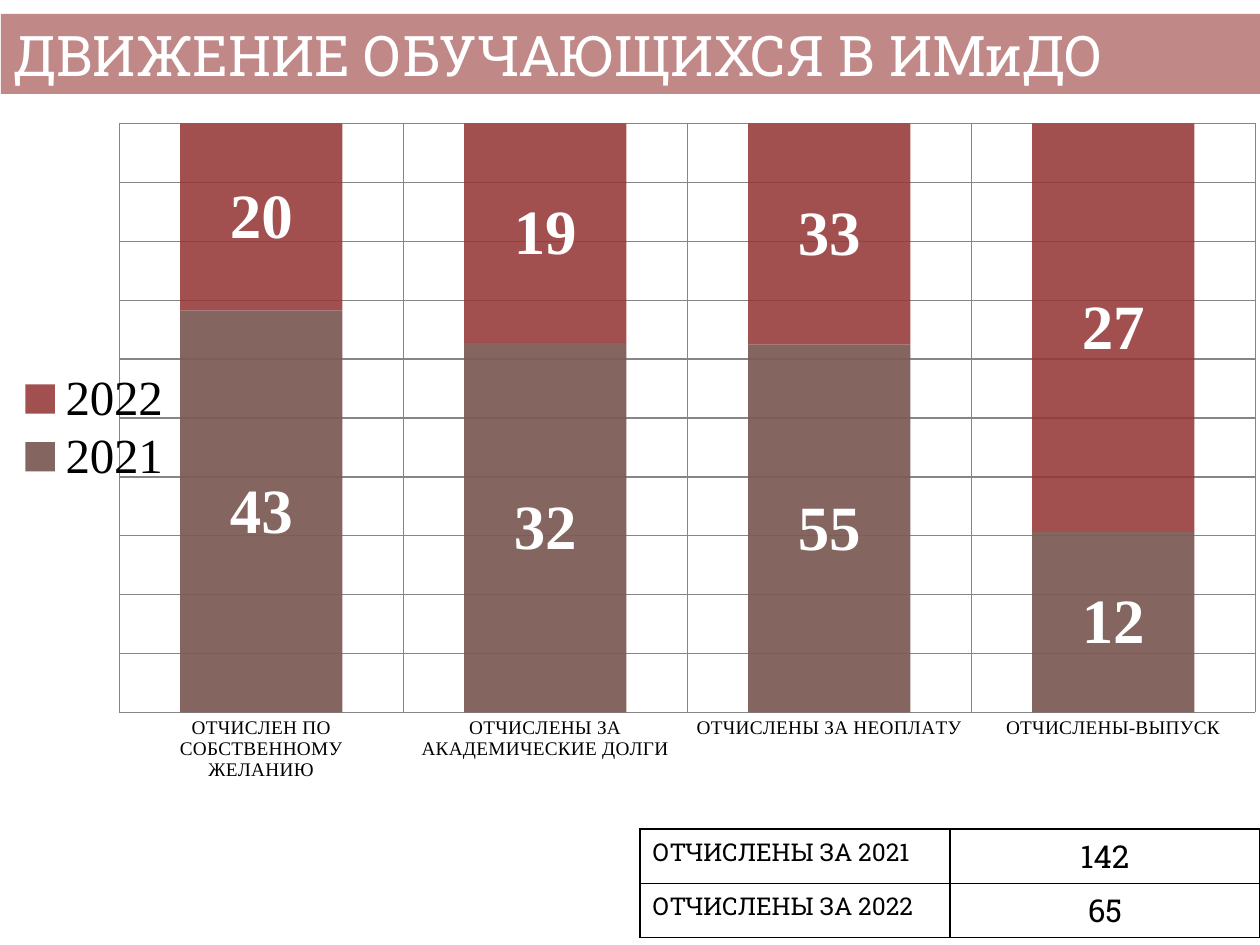
"""Build the slide on student movement: title band, stacked chart and totals table."""
from lxml import etree
from pptx import Presentation
from pptx.chart.data import CategoryChartData
from pptx.dml.color import RGBColor
from pptx.enum.chart import (XL_CHART_TYPE, XL_LABEL_POSITION, XL_LEGEND_POSITION,
                             XL_TICK_MARK)
from pptx.enum.shapes import MSO_SHAPE
from pptx.enum.text import MSO_ANCHOR, PP_ALIGN
from pptx.oxml.ns import qn
from pptx.util import Pt

STACKED = XL_CHART_TYPE.COLUMN_STACKED_100
MIDDLE = XL_LABEL_POSITION.CENTER
AT_LEFT = XL_LEGEND_POSITION.LEFT
NO_TICK = XL_TICK_MARK.NONE
RECT = MSO_SHAPE.RECTANGLE
ANCHOR = MSO_ANCHOR.MIDDLE
LEFT, CENTER = PP_ALIGN.LEFT, PP_ALIGN.CENTER

WHITE = RGBColor(0xFF, 0xFF, 0xFF)
BLACK = RGBColor(0, 0, 0)
RED = RGBColor(0x95, 0x37, 0x35)
BROWN = RGBColor(0x7C, 0x5A, 0x54)
GREY = RGBColor(0x86, 0x86, 0x86)
SLAB, SERIF = "Roboto Slab", "Times New Roman"

CATS = ["ОТЧИСЛЕН ПО СОБСТВЕННОМУ ЖЕЛАНИЮ", "ОТЧИСЛЕНЫ ЗА АКАДЕМИЧЕСКИЕ ДОЛГИ",
        "ОТЧИСЛЕНЫ ЗА НЕОПЛАТУ", "ОТЧИСЛЕНЫ-ВЫПУСК"]
YEARS = [("2021", (43, 32, 55, 12), BROWN, 93), ("2022", (20, 19, 33, 27), RED, 87)]
TOTALS = [("ОТЧИСЛЕНЫ ЗА 2021", "142"), ("ОТЧИСЛЕНЫ ЗА 2022", "65")]


def px(*sizes):
    """Turn pixels into EMU."""
    return [round(size * 914400 / 126) for size in sizes]


def fade(colors, alpha):
    """Set the opacity of colour elements in percent."""
    for color in colors:
        etree.SubElement(color, qn("a:alpha")).set("val", str(alpha * 1000))


def place(parent, index, inner, box):
    """Give a chart part a manual layout in fractions of the chart."""
    for old in parent.findall(qn("c:layout")):
        parent.remove(old)
    layout = etree.Element(qn("c:layout"))
    manual = etree.SubElement(layout, qn("c:manualLayout"))
    pairs = [("layoutTarget", "inner")] if inner else []
    pairs += [("xMode", "edge"), ("yMode", "edge"), *zip("xywh", box)]
    for name, value in pairs:
        etree.SubElement(manual, qn("c:" + name)).set("val", str(value))
    parent.insert(index, layout)


class Deck:
    """Hold the style and the current slide."""

    def __init__(self, slide):
        self.slide = slide

    def style(self, font, size, color, face=SLAB, bold=False):
        """Set the look of a font."""
        font.name, font.size, font.bold = face, Pt(size), bold
        font.color.rgb = color

    def label(self, frame, text, size, color, align=LEFT):
        """Put one styled paragraph in a frame."""
        frame.text = text
        line = frame.paragraphs[0]
        line.alignment = align
        self.style(line.runs[0].font, size, color)

    def band(self, text, box):
        """Add the title band."""
        band = self.slide.shapes.add_shape(RECT, *px(*box))
        band.shadow.inherit = False
        band.fill.solid()
        band.fill.fore_color.rgb = RED
        fade(band.element.xpath("p:spPr/a:solidFill/a:srgbClr"), 59)
        band.line.fill.background()
        band.text_frame.word_wrap = True
        band.text_frame.vertical_anchor = ANCHOR
        self.label(band.text_frame, text, 32, WHITE)

    def border(self, cell):
        """Draw a thin black line round a cell."""
        props = cell._tc.get_or_add_tcPr()
        for index, side in enumerate("LRTB"):
            line = etree.Element(qn("a:ln" + side), w=str(int(Pt(1))))
            fill = etree.SubElement(line, qn("a:solidFill"))
            etree.SubElement(fill, qn("a:srgbClr")).set("val", str(BLACK))
            props.insert(index, line)

    def table(self, rows, box):
        """Add the table of totals."""
        frame = self.slide.shapes.add_table(len(rows), len(rows[0]), *px(*box))
        looks = [(14, LEFT), (18, CENTER)]
        for y, row in enumerate(rows):
            for x, (text, (size, align)) in enumerate(zip(row, looks)):
                cell = frame.table.cell(y, x)
                cell.fill.background()
                self.border(cell)
                self.label(cell.text_frame, text, size, BLACK, align)

    def chart(self, cats, years, box):
        """Add the stacked column chart."""
        data = CategoryChartData()
        data.categories = cats
        for name, values, _, _ in years:
            data.add_series(name, values)
        chart = self.slide.shapes.add_chart(STACKED, *px(*box), data).chart
        chart.has_title = False
        self.style(chart.font, 16, BLACK, SERIF)
        plot = chart.plots[0]
        plot.gap_width, plot.overlap = 75, 100
        plot.vary_by_categories = False
        for series, (_, _, color, alpha) in zip(plot.series, years):
            fill = series.format.fill
            fill.solid()
            fill.fore_color.rgb = color
            fade(series._element.xpath("c:spPr/a:solidFill/a:srgbClr"), alpha)
            labels = series.data_labels
            labels.show_value = True
            labels.position = MIDDLE
            self.style(labels.font, 36, WHITE, SERIF, True)
        self.axes(chart)
        chart.has_legend = True
        legend = chart.legend
        legend.position = AT_LEFT
        legend.include_in_layout = False
        self.style(legend.font, 28, BLACK, SERIF)
        root = chart.element
        place(root.xpath("c:chart/c:plotArea")[0], 0, True, (0.095, 0.042, 0.905, 0.838))
        place(root.xpath("c:chart/c:legend")[0], 1, False, (0.01, 0.39, 0.13, 0.17))

    def axes(self, chart):
        """Style both axes and their gridlines."""
        cat, val = chart.category_axis, chart.value_axis
        for axis in (cat, val):
            axis.has_major_gridlines = True
            for line in (axis.major_gridlines.format.line, axis.format.line):
                line.color.rgb = GREY
                line.width = Pt(0.75)
        cat.major_tick_mark = NO_TICK
        self.style(cat.tick_labels.font, 11, BLACK, SERIF)
        val.major_unit = 0.1
        val.visible = False


def main():
    """Make and save the deck."""
    show = Presentation()
    show.slide_width, show.slide_height = px(1260, 945)
    deck = Deck(show.slides.add_slide(show.slide_layouts[6]))
    deck.band("ДВИЖЕНИЕ ОБУЧАЮЩИХСЯ В ИМиДО", (1, 14, 1261, 80))
    deck.table(TOTALS, (640, 829, 620, 101))
    deck.chart(CATS, YEARS, (0, 94, 1256, 703))
    show.save("out.pptx")


if __name__ == "__main__":
    main()
